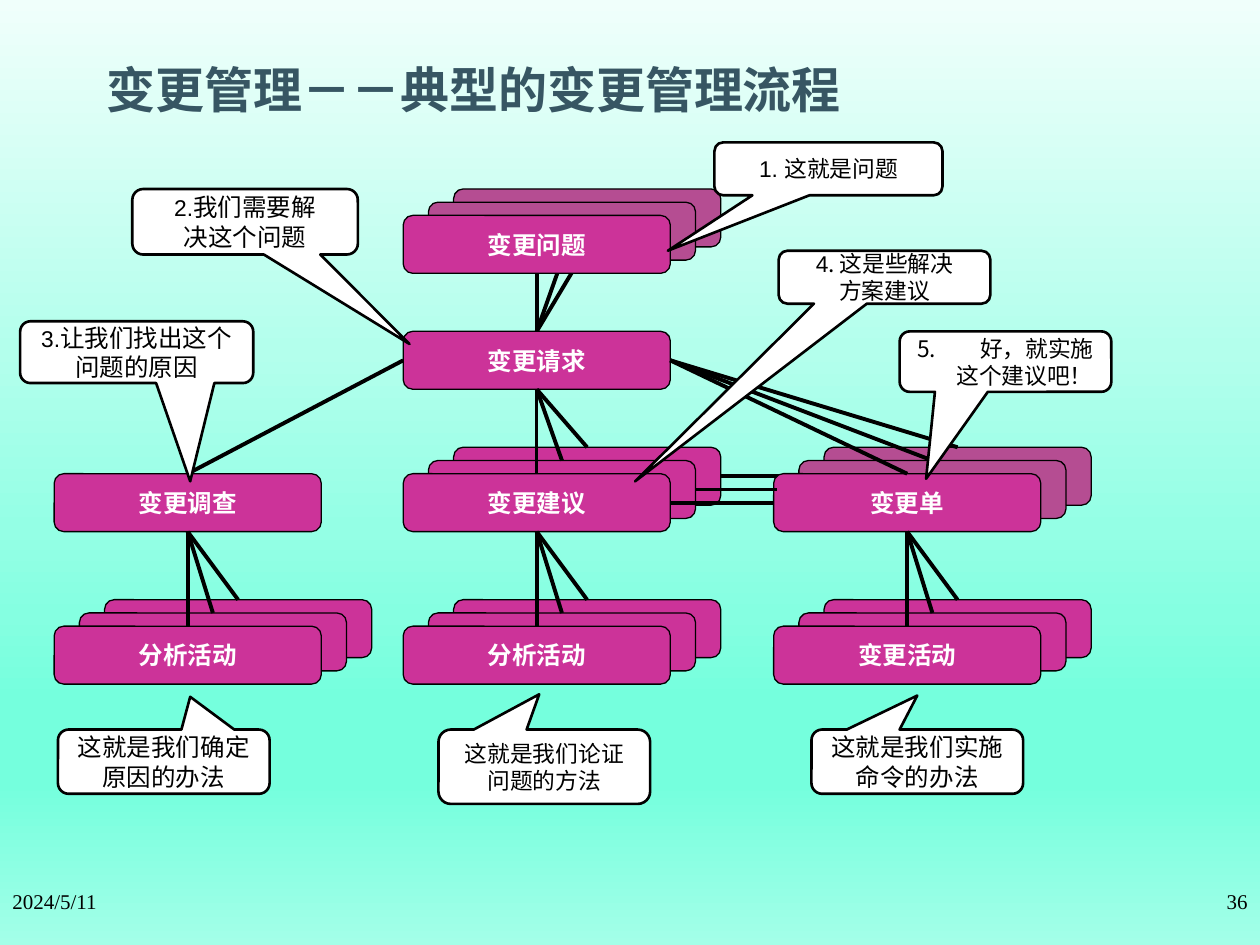
from lxml.etree import SubElement as Sub
from pptx import Presentation
from pptx.dml.color import RGBColor as Rgb
from pptx.enum.shapes import MSO_CONNECTOR as Wire, MSO_SHAPE as Form
from pptx.enum.text import MSO_ANCHOR as Anchor, PP_ALIGN as Align
from pptx.oxml.ns import qn
from pptx.util import Inches, Pt

INK = {"title": "375663", "text": "000000", "light": "FFFFFF",
       "main": "CC3399", "dim": "B54D92"}
FADE = {0: "F0FFFB", 37: "B3FFEC", 56: "94FFE5", 65: "85FFE1",
        74: "75FFDD", 83: "75FFDD", 100: "A3FFE8"}
CJK, SANS, SERIF = "Noto Sans CJK SC", "Arial", "Times New Roman"

deck = Presentation()
deck.slide_width, deck.slide_height = Inches(10), Inches(7.5)
unit = deck.slide_width / 100
page = deck.slides.add_slide(deck.slide_layouts[6])
items = page.shapes


def draw(form, x, y, w, h, fill, width):
    shape = items.add_shape(form, *[int(n * unit) for n in (x, y, w, h)])
    shape.shadow.inherit = False
    shape.fill.solid()
    shape.fill.fore_color.rgb = Rgb.from_string(INK[fill])
    shape.line.color.rgb = Rgb.from_string(INK["text"])
    shape.line.width = Pt(width)
    frame = shape.text_frame
    frame.word_wrap = False
    frame.vertical_anchor = Anchor.MIDDLE
    frame.margin_left = frame.margin_right = Inches(0.08)
    frame.margin_top = frame.margin_bottom = Inches(0.04)
    return shape


def write(shape, text, size, face, ink="text", bold=False, align=Align.CENTER):
    shape.text_frame.text = text
    for para in shape.text_frame.paragraphs:
        para.alignment = align
        head, *tail = para.text.split("|")
        para.text = head
        for part in tail:
            para.add_run().text = part
        for run in para.runs:
            label = tail and run.text == head
            font = run.font
            font.size = Pt(13 if label else size)
            font.name = SANS if label else face
            font.bold = bold
            font.color.rgb = Rgb.from_string(INK[ink])
            Sub(run._r.get_or_add_rPr(), qn("a:ea"), typeface=CJK)


back = page.background.fill
back.gradient()
back.gradient_angle = 270
stops = page.element.find(".//" + qn("a:gsLst"))
for stop in list(stops):
    stops.remove(stop)
for place, tone in FADE.items():
    stop = Sub(stops, qn("a:gs"), pos=str(place * 1000))
    Sub(stop, qn("a:srgbClr"), val=tone)

cols = [4.3, 32, 61.4]
rows = [17.1, 26.3, 37.6, 49.7]
wide, high = 21.2, 4.6
step, rise = 2, 1.05

stacks = [
    ("issue", "变更问题", 1, 0, 3, "dim", SANS),
    ("ask", "变更请求", 1, 1, 1, "main", CJK),
    ("probe", "变更调查", 0, 2, 1, "main", CJK),
    ("plan", "变更建议", 1, 2, 3, "main", SANS),
    ("order", "变更单", 2, 2, 3, "dim", SANS),
    ("study", "分析活动", 0, 3, 3, "main", SANS),
    ("proof", "分析活动", 1, 3, 3, "main", SANS),
    ("work", "变更活动", 2, 3, 3, "main", SANS),
]
boxes = {}
for name, text, col, row, count, tint, face in stacks:
    for deep in reversed(range(count)):
        boxes[name, deep] = draw(
            Form.ROUNDED_RECTANGLE, cols[col] + deep * step,
            rows[row] - deep * rise, wide, high, tint if deep else "main", 0.75)
    write(boxes[name, 0], text, 14, face, "light", True)

TOP, LEFT, BASE, RIGHT = range(4)
links = [(("probe", 0), TOP, ("ask", 0), LEFT)]
for deep in range(3):
    links += [(("issue", deep), BASE, ("ask", 0), TOP),
              (("ask", 0), BASE, ("plan", deep), TOP),
              (("ask", 0), RIGHT, ("order", deep), TOP),
              (("plan", deep), RIGHT, ("order", deep), LEFT)]
    for head, tail in (("probe", "study"), ("plan", "proof"), ("order", "work")):
        links.append(((head, 0), BASE, (tail, deep), TOP))

for start, side, end, port in links:
    wire = items.add_connector(Wire.STRAIGHT, 0, 0, 0, 0)
    wire.begin_connect(boxes[start], side)
    if (start, end) == (("plan", 1), ("order", 1)):
        wire.end_x, wire.end_y = int(61.7 * unit), wire.begin_y
    else:
        wire.end_connect(boxes[end], port)
        if start[1]:
            boxes[start].element.addnext(wire.element)
    wire.line.color.rgb = Rgb.from_string(INK["text"])
    wire.line.width = Pt(1.5 if (start[0], end) == ("ask", ("plan", 0)) else 2.25)
    Sub(wire.element.spPr, qn("a:effectLst"))

notes = [
    ("1. |这就是问题", 56.7, 11.3, 18.1, 4.2, 53, 19.9, 13, CJK),
    ("2.|我们需要解\n决这个问题", 10.5, 15, 17.9, 5.2, 32.5, 27.3, 14, SANS),
    ("3.|让我们找出这个\n问题的原因", 1.6, 25.5, 18.5, 4.9, 15.1, 38.2, 14, SANS),
    ("4|. 这是些解决\n方案建议", 61.8, 19.9, 16.8, 4.2, 50.4, 38.2, 13, CJK),
    ("好，就实施\n这个建议吧！", 71.4, 26.3, 16.8, 4.8, 73.5, 38, 13, CJK),
    ("这就是我们确定\n原因的办法", 4.6, 57.9, 16.8, 5.1, 15.1, 55.3, 14, SANS),
    ("这就是我们论证\n问题的方法", 34.8, 57.9, 16.8, 5.9, 42.8, 55.1, 13, CJK),
    ("这就是我们实施\n命令的办法", 64.4, 57.9, 16.8, 5.1, 72.8, 55.2, 14, SANS),
]
for text, x, y, w, h, tip, dip, size, face in notes:
    note = draw(Form.ROUNDED_RECTANGULAR_CALLOUT, x, y, w, h, "light", 1.5)
    note.adjustments[0] = (tip - x) / w - 0.5
    note.adjustments[1] = (dip - y) / h - 0.5
    write(note, text, size, face)
    if text.startswith("好"):
        first, last = [p._p.get_or_add_pPr() for p in note.text_frame.paragraphs]
        first.set("marL", str(Inches(0.5)))
        first.set("indent", str(-Inches(0.5)))
        Sub(first, qn("a:buAutoNum"), type="arabicPeriod", startAt="5")
        last.set("marL", str(Inches(0.3)))

labels = [
    ("变更管理－－典型的变更管理流程", 7.5, 4.2, 78.1, 5.7, 28, CJK, "title", True, Align.LEFT),
    ("2024/5/11", 0, 70, 20.8, 5, 12, SERIF, "text", False, Align.LEFT),
    ("36", 79.2, 70, 20.8, 5, 12, SERIF, "text", False, Align.RIGHT),
]
for text, x, y, w, h, *style in labels:
    label = items.add_textbox(*[int(n * unit) for n in (x, y, w, h)])
    label.text_frame.word_wrap = True
    if "title" in style:
        label.text_frame.vertical_anchor = Anchor.MIDDLE
    write(label, text, *style)

deck.save("out.pptx")
